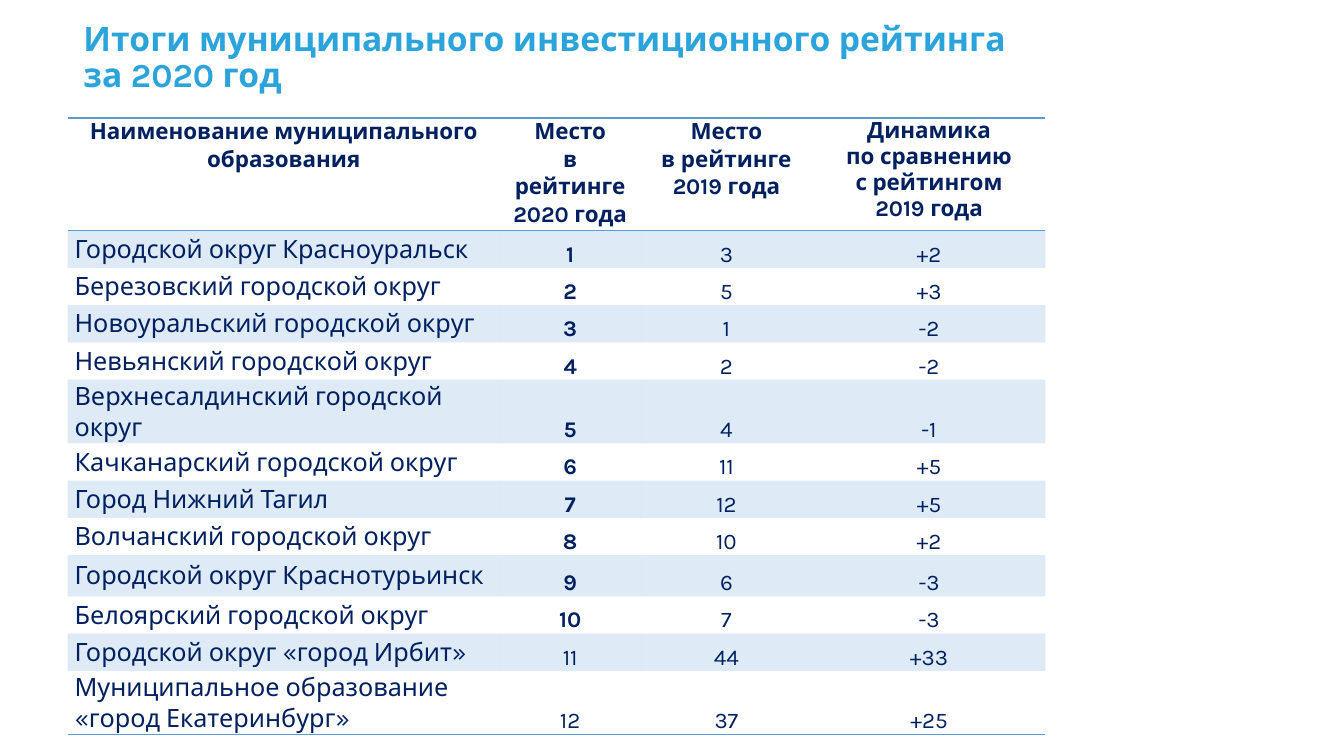
"""Build the slide with the municipal investment rating table."""
from copy import deepcopy

from lxml import etree
from pptx import Presentation, util as u
from pptx.dml.color import RGBColor
from pptx.enum import text
from pptx.oxml.ns import qn

TITLE = "Итоги муниципального инвестиционного рейтинга\nза 2020 год"
HEADERS = [
    ["Наименование муниципального образования"],
    ["Место\nв рейтинге 2020 года"],
    ["Место\nв рейтинге 2019 года"],
    ["Динамика", "по сравнению\nс рейтингом", "2019 года"],
]
RATING = [
    (["Городской округ Красноуральск"], 3, "+2"),
    (["Березовский городской округ"], 5, "+3"),
    (["Новоуральский городской округ"], 1, "-2"),
    (["Невьянский городской округ"], 2, "-2"),
    (["Верхнесалдинский городской округ"], 4, "-1"),
    (["Качканарский городской округ"], 11, "+5"),
    (["Город Нижний Тагил"], 12, "+5"),
    (["Волчанский городской округ"], 10, "+2"),
    (["Городской округ Краснотурьинск"], 6, "-3"),
    (["Белоярский городской округ"], 7, "-3"),
    (["Городской округ «город Ирбит»"], 44, "+33"),
    (["Муниципальное образование", "«город Екатеринбург»"], 37, "+25"),
]
COLUMN_WIDTHS = [4.29, 1.39, 1.71, 2.31]
HEADER_HEIGHT, ROW_HEIGHT = 1.03, 0.37
SPECIAL_HEIGHTS = {5: 0.41, 9: 0.41, 12: 0.61}
TOP_PLACES = 10
TABLE_LEFT, TABLE_TOP = 0.67, 1.17

FONT = "Karla"
SKY = RGBColor(0x2A, 0xA4, 0xDB)
NAVY = RGBColor(0x00, 0x20, 0x60)
BLUE = RGBColor(0x5B, 0x9B, 0xD5)
BAND_ALPHA = "20000"
PLAIN_STYLE = "{2D5ABB26-0587-4C30-8999-92F81FD0307C}"
LEFT, CENTER = text.PP_ALIGN.LEFT, text.PP_ALIGN.CENTER
TOP, MIDDLE, BOTTOM = (text.MSO_ANCHOR.TOP, text.MSO_ANCHOR.MIDDLE,
                       text.MSO_ANCHOR.BOTTOM)


def write(frame, paragraphs, size=16, bold=False, color=NAVY, align=CENTER, spacing=1.05):
    for index, content in enumerate(paragraphs):
        paragraph = frame.add_paragraph() if index else frame.paragraphs[0]
        paragraph.text = content
        paragraph.alignment = align
        paragraph.line_spacing = spacing
        for run in paragraph.runs:
            run.font.name = FONT
            run.font.size = u.Pt(size)
            run.font.bold = bold
            run.font.color.rgb = color
        for line_break in paragraph._p.findall(qn("a:br")):
            line_break.append(deepcopy(paragraph.runs[0]._r.rPr))


def add_borders(cell, sides):
    properties = cell._tc.get_or_add_tcPr()
    for side in sides:
        line = etree.Element(qn(f"a:ln{side}"), w=str(u.Pt(1)))
        fill = etree.SubElement(line, qn("a:solidFill"))
        etree.SubElement(fill, qn("a:srgbClr"), val=str(BLUE))
        properties.insert(0, line)


def format_cell(cell, anchor, banded, sides):
    cell.vertical_anchor = anchor
    cell.margin_left = cell.margin_right = u.Inches(0.07)
    cell.margin_top = cell.margin_bottom = 0
    if banded:
        cell.fill.solid()
        cell.fill.fore_color.rgb = BLUE
        color = cell._tc.tcPr.find(".//" + qn("a:srgbClr"))
        etree.SubElement(color, qn("a:alpha"), val=BAND_ALPHA)
    else:
        cell.fill.background()
    add_borders(cell, sides)


def add_title(slide):
    box = slide.shapes.add_textbox(u.Inches(0.73), 0, u.Inches(10.8), u.Inches(1.17))
    frame = box.text_frame
    frame.word_wrap = True
    frame.vertical_anchor = MIDDLE
    write(frame, [TITLE], size=24, bold=True, color=SKY, align=LEFT, spacing=0.9)


def add_rating(slide):
    heights = [HEADER_HEIGHT] + [SPECIAL_HEIGHTS.get(place, ROW_HEIGHT)
                                 for place in range(1, len(RATING) + 1)]
    table = slide.shapes.add_table(
        len(heights), len(COLUMN_WIDTHS), u.Inches(TABLE_LEFT), u.Inches(TABLE_TOP),
        u.Inches(sum(COLUMN_WIDTHS)), u.Inches(sum(heights))).table
    table._tbl.tblPr.find(qn("a:tableStyleId")).text = PLAIN_STYLE
    for column, width in zip(table.columns, COLUMN_WIDTHS):
        column.width = u.Inches(width)
    for row, height in zip(table.rows, heights):
        row.height = u.Inches(height)

    for column, paragraphs in enumerate(HEADERS):
        cell = table.cell(0, column)
        format_cell(cell, TOP, False, "BT")
        write(cell.text_frame, paragraphs, bold=True,
              spacing=1.0 if len(paragraphs) > 1 else 1.05)

    for place, (name, previous, change) in enumerate(RATING, 1):
        values = [name, [str(place)], [str(previous)], [change]]
        for column, paragraphs in enumerate(values):
            cell = table.cell(place, column)
            is_name = column == 0
            format_cell(cell, MIDDLE if is_name else BOTTOM, place % 2 == 1,
                        "B" if place == len(RATING) else "")
            write(cell.text_frame, paragraphs, size=18 if is_name else 16,
                  bold=column == 1 and place <= TOP_PLACES,
                  align=LEFT if is_name else CENTER)


def main():
    presentation = Presentation()
    presentation.slide_width = u.Inches(13.33)
    presentation.slide_height = u.Inches(7.5)
    slide = presentation.slides.add_slide(presentation.slide_layouts[6])
    add_title(slide)
    add_rating(slide)
    presentation.save("out.pptx")


if __name__ == "__main__":
    main()
